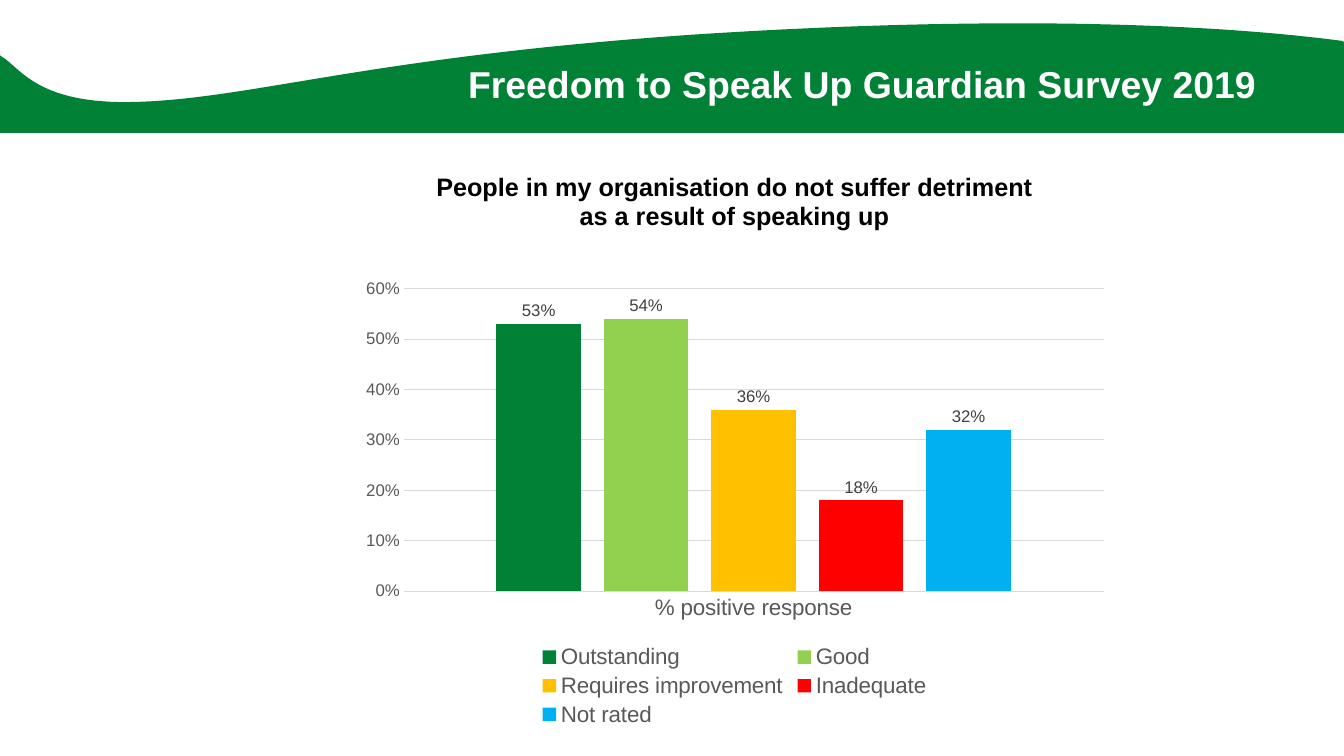
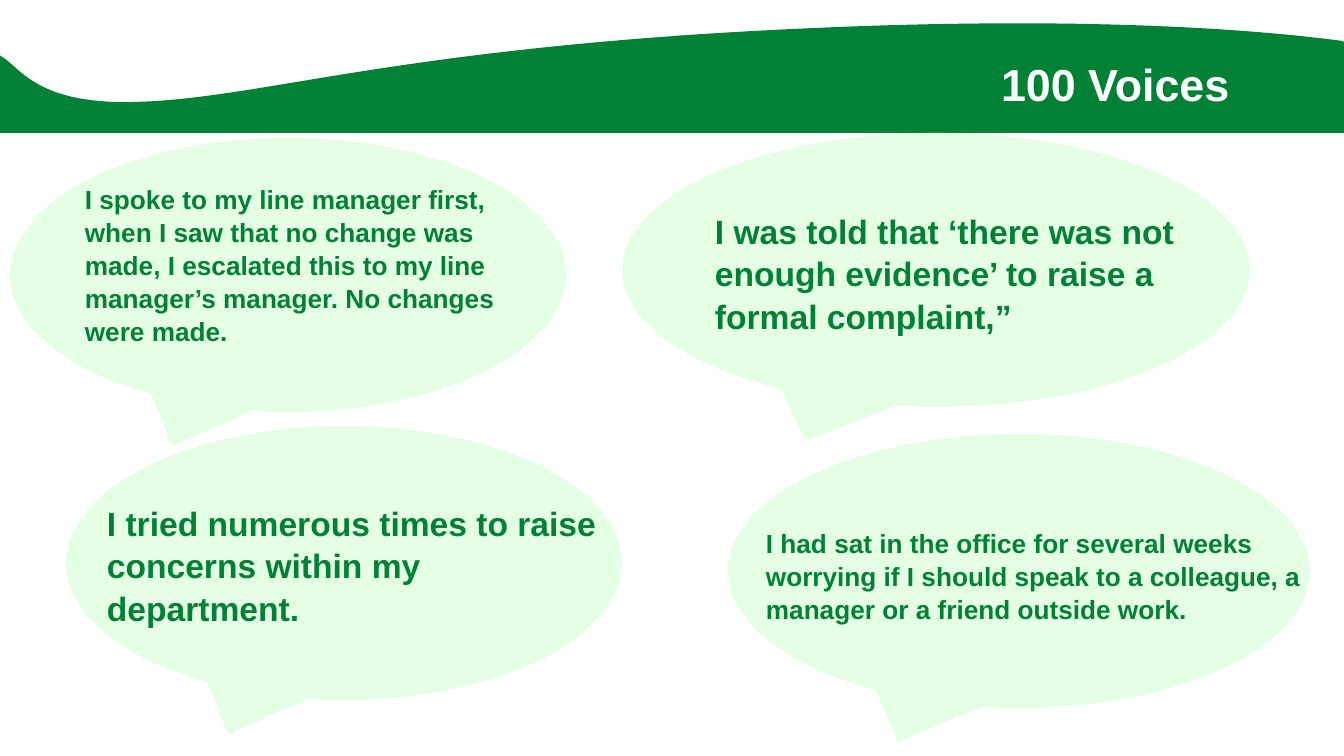
import lxml.etree
import pptx
import pptx.chart.data
import pptx.dml.color
import pptx.enum.chart
import pptx.enum.shapes
import pptx.enum.text
import pptx.oxml.ns
import pptx.util

EMU_PER_PX = 914400 / 100.8
SLIDE_W, SLIDE_H = 1344, 756
BAND_BOTTOM = 133
FONT = "Arial"
GREEN, PALE_GREEN, WHITE, BLACK = "008136", "E5FFE5", "FFFFFF", "000000"
AXIS_GREY, LABEL_GREY, GRID_GREY = "595959", "404040", "D9D9D9"

# Cubic segments of the wave, right to left: two controls, then the end point
WAVE_START = (1350, 42)
WAVE_CURVES = [
    ((1242, 27), (1034, 13), (703, 34)),
    ((370, 56), (253, 99), (134, 102)),
    ((15, 105), (17, 49), (-12, 54)),
]

RATINGS = [
    ("Outstanding", 0.53, GREEN),
    ("Good", 0.54, "92D050"),
    ("Requires improvement", 0.36, "FFC000"),
    ("Inadequate", 0.18, "FF0000"),
    ("Not rated", 0.32, "00B0F0"),
]

# Bubble box, text box relative to the bubble, text size, quote
VOICES = [
    ((10, 138, 556, 274), (65, 39, 457, 168), 18.7,
     "I spoke to my line manager first, when I saw that no change was made, "
     "I escalated this to my line manager’s manager. No changes were made."),
    ((622, 133, 628, 274), (83, 71, 545, 132), 24,
     "I was told that ‘there was not enough evidence’ to raise a formal complaint,”"),
    ((728, 434, 582, 274), (28, 87, 568, 105), 18.7,
     "I had sat in the office for several weeks worrying if I should speak "
     "to a colleague, a manager or a friend outside work."),
    ((66, 426, 556, 274), (31, 70, 525, 132), 24,
     "I tried numerous times to raise concerns within my department."),
]


def px(length):
    return pptx.util.Emu(round(length * EMU_PER_PX))


def box_emu(box):
    return [px(length) for length in box]


def colour(hex_code):
    return pptx.dml.color.RGBColor.from_string(hex_code)


def style_font(font, size, hex_code, bold=False):
    font.name = FONT
    font.size = pptx.util.Pt(size)
    font.bold = bold
    font.color.rgb = colour(hex_code)


def paint(shape, hex_code):
    shape.shadow.inherit = False
    shape.fill.solid()
    shape.fill.fore_color.rgb = colour(hex_code)
    shape.line.fill.background()


def wave_points(steps=40):
    """Sample the wave's curves, held within the slide's width."""
    points, start = [], WAVE_START
    for first, second, end in WAVE_CURVES:
        for step in range(steps + 1):
            t = step / steps
            x, y = ((1 - t) ** 3 * a + 3 * (1 - t) ** 2 * t * b
                    + 3 * (1 - t) * t ** 2 * c + t ** 3 * d
                    for a, b, c, d in zip(start, first, second, end))
            points.append((px(min(max(x, 0), SLIDE_W)), px(y)))
        start = end
    return points


def add_band_to_layout(layout, slide):
    """Draw the wave on a slide, then move it behind the layout's placeholders."""
    points = wave_points()
    points += [(0, px(BAND_BOTTOM)), (px(SLIDE_W), px(BAND_BOTTOM))]
    outline = slide.shapes.build_freeform(*points[0], scale=1.0)
    outline.add_line_segments(points[1:], close=True)
    band = outline.convert_to_shape()
    paint(band, GREEN)
    layout.shapes.element.insert(2, band.element)


def set_title(slide, text, left, size):
    title = slide.shapes.title
    title.left, title.top, title.width, title.height = box_emu(
        (left, 18, SLIDE_W - left, 131))
    frame = title.text_frame
    frame.auto_size = pptx.enum.text.MSO_AUTO_SIZE.NONE
    frame.vertical_anchor = pptx.enum.text.MSO_ANCHOR.MIDDLE
    frame.margin_left = frame.margin_right = px(39)
    frame.margin_top = frame.margin_bottom = px(16)
    paragraph = frame.paragraphs[0]
    paragraph.alignment = pptx.enum.text.PP_ALIGN.LEFT
    run = paragraph.add_run()
    run.text = text
    style_font(run.font, size, WHITE, bold=True)


def place_plot(chart, x, y, w, h):
    """Fix the inner plot area, in fractions of the chart."""
    qn = pptx.oxml.ns.qn
    plot_area = chart.element.xpath("c:chart/c:plotArea")[0]
    for automatic in plot_area.findall(qn("c:layout")):
        plot_area.remove(automatic)
    layout = lxml.etree.Element(qn("c:layout"))
    manual = lxml.etree.SubElement(layout, qn("c:manualLayout"))
    settings = [("layoutTarget", "inner"), ("xMode", "edge"), ("yMode", "edge"),
                ("x", x), ("y", y), ("w", w), ("h", h)]
    for name, value in settings:
        lxml.etree.SubElement(manual, qn(f"c:{name}")).set("val", str(value))
    plot_area.insert(0, layout)


def style_axes(chart):
    categories, values = chart.category_axis, chart.value_axis
    for axis, size in ((categories, 16), (values, 12)):
        axis.major_tick_mark = pptx.enum.chart.XL_TICK_MARK.NONE
        axis.minor_tick_mark = pptx.enum.chart.XL_TICK_MARK.NONE
        style_font(axis.tick_labels.font, size, AXIS_GREY)
    values.minimum_scale, values.maximum_scale, values.major_unit = 0, 0.6, 0.1
    values.tick_labels.number_format = "0%"
    values.tick_labels.number_format_is_linked = False
    values.format.line.fill.background()
    for line in (categories.format.line, values.major_gridlines.format.line):
        line.color.rgb = colour(GRID_GREY)
        line.width = pptx.util.Pt(0.75)


def style_bars(plot):
    plot.gap_width, plot.overlap = 219, -27
    plot.vary_by_categories = False
    for series, (_, _, fill) in zip(plot.series, RATINGS):
        series.format.fill.solid()
        series.format.fill.fore_color.rgb = colour(fill)
        labels = series.data_labels
        labels.show_value = True
        labels.number_format = "0%"
        labels.number_format_is_linked = False
        labels.position = pptx.enum.chart.XL_LABEL_POSITION.OUTSIDE_END
        style_font(labels.font, 12, LABEL_GREY)


def add_ratings_chart(slide, box):
    data = pptx.chart.data.CategoryChartData(number_format="0%")
    data.categories = ["% positive response"]
    for rating, share, _ in RATINGS:
        data.add_series(rating, [share])
    chart = slide.shapes.add_chart(
        pptx.enum.chart.XL_CHART_TYPE.COLUMN_CLUSTERED, *box_emu(box), data).chart
    style_font(chart.font, 10, BLACK)
    heading = chart.chart_title.text_frame.paragraphs[0].add_run()
    heading.text = ("People in my organisation do not suffer detriment "
                    "as a result of speaking up")
    style_font(heading.font, 18, BLACK, bold=True)
    chart.has_legend = True
    chart.legend.position = pptx.enum.chart.XL_LEGEND_POSITION.BOTTOM
    chart.legend.include_in_layout = False
    style_font(chart.legend.font, 16, AXIS_GREY)
    style_axes(chart)
    style_bars(chart.plots[0])
    place_plot(chart, 0.07, 0.24, 0.91, 0.52)


def add_voice(slide, bubble_box, quote_box, size, quote):
    """Group a speech bubble with its quote, which is placed from the bubble's corner."""
    left, top = bubble_box[:2]
    dx, dy, width, height = quote_box
    voice = slide.shapes.add_group_shape()
    bubble = voice.shapes.add_shape(
        pptx.enum.shapes.MSO_SHAPE.OVAL_CALLOUT, *box_emu(bubble_box))
    paint(bubble, PALE_GREEN)
    frame = voice.shapes.add_textbox(
        *box_emu((left + dx, top + dy, width, height))).text_frame
    frame.word_wrap = True
    paragraph = frame.paragraphs[0]
    paragraph.line_spacing = 1.05
    run = paragraph.add_run()
    run.text = quote
    style_font(run.font, size, GREEN, bold=True)


def build_survey_slide(slide):
    set_title(slide, "Freedom to Speak Up Guardian Survey 2019", 429, 26.7)
    add_ratings_chart(slide, (350, 149, 769, 582))


def build_voices_slide(slide):
    set_title(slide, "100 Voices", 962, 32)
    for voice in VOICES:
        add_voice(slide, *voice)


def main():
    deck = pptx.Presentation()
    deck.slide_width, deck.slide_height = px(SLIDE_W), px(SLIDE_H)
    title_only = deck.slide_layouts[5]
    survey = deck.slides.add_slide(title_only)
    add_band_to_layout(title_only, survey)
    build_survey_slide(survey)
    build_voices_slide(deck.slides.add_slide(title_only))
    deck.save("out.pptx")


if __name__ == "__main__":
    main()
